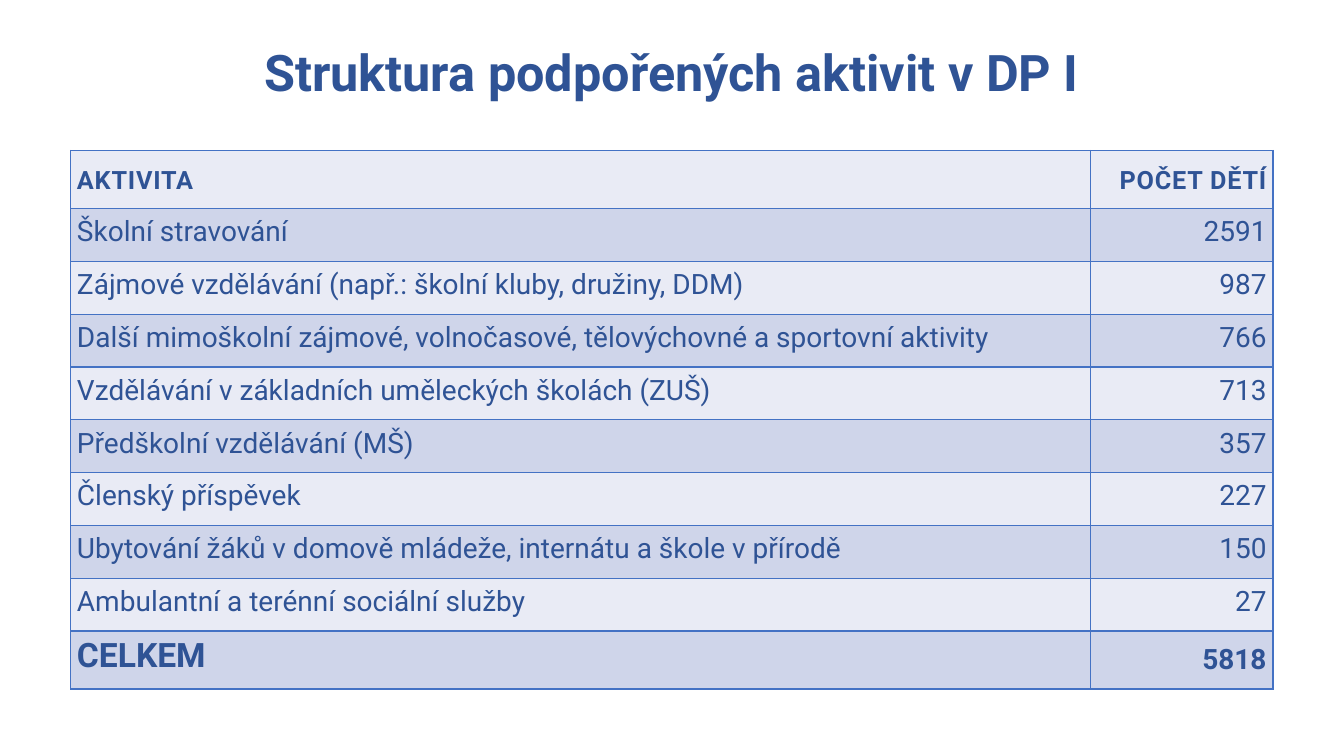
from lxml import etree
from pptx import Presentation
from pptx import util as u
from pptx.dml.color import RGBColor
from pptx.enum import text
from pptx.oxml.ns import qn

TITLE = "Struktura podpořených aktivit v DP I"
HEADER = ("AKTIVITA", "POČET DĚTÍ")
ACTIVITIES = [
    ("Školní stravování", 2591),
    ("Zájmové vzdělávání (např.: školní kluby, družiny, DDM)", 987),
    ("Další mimoškolní zájmové, volnočasové, tělovýchovné a sportovní aktivity", 766),
    ("Vzdělávání v základních uměleckých školách (ZUŠ)", 713),
    ("Předškolní vzdělávání (MŠ)", 357),
    ("Členský příspěvek", 227),
    ("Ubytování žáků v domově mládeže, internátu a škole v přírodě", 150),
    ("Ambulantní a terénní sociální služby", 27),
]
TOTAL = ("CELKEM", sum(count for _, count in ACTIVITIES))
ROWS = [HEADER, *ACTIVITIES, TOTAL]

COLORS = {"ink": "2F5395", "line": "4472C4", "light": "E9EBF5", "dark": "CFD5EA"}
FONT = "Roboto"
LEFT, WIDTH = 1.78, 30.3
TITLE_TOP, TITLE_HEIGHT = 0.91, 1.8
TABLE_TOP = 3.79
COLUMN_WIDTHS = (25.7, 4.6)
HEADER_HEIGHT, ROW_HEIGHT, TOTAL_HEIGHT = 1.47, 1.33, 1.46
SIDE_INSET, END_INSET = 0.16, 0.32
ALIGNMENTS = (text.PP_ALIGN.LEFT, text.PP_ALIGN.RIGHT)


def add_span(para, words, size, bold):
    span = para.add_run()
    span.text = str(words)
    span.font.name = FONT
    span.font.size = u.Pt(size)
    span.font.bold = bold
    span.font.color.rgb = RGBColor.from_string(COLORS["ink"])
    return span


def add_borders(cell):
    properties = cell._tc.get_or_add_tcPr()
    for position, side in enumerate(("lnL", "lnR", "lnT", "lnB")):
        line = etree.Element(qn(f"a:{side}"), w=str(u.Pt(1)))
        fill = etree.SubElement(line, qn("a:solidFill"))
        etree.SubElement(fill, qn("a:srgbClr"), val=COLORS["line"])
        properties.insert(position, line)


def add_title(page):
    box = page.shapes.title
    box.left, box.top = u.Cm(LEFT), u.Cm(TITLE_TOP)
    box.width, box.height = u.Cm(WIDTH), u.Cm(TITLE_HEIGHT)
    frame = box.text_frame
    frame.word_wrap = True
    frame.auto_size = text.MSO_AUTO_SIZE.NONE
    frame.vertical_anchor = text.MSO_ANCHOR.MIDDLE
    para = frame.paragraphs[0]
    para.alignment = text.PP_ALIGN.CENTER
    add_span(para, TITLE, 36, True)


def add_activity_table(page):
    heights = [HEADER_HEIGHT] + [ROW_HEIGHT] * len(ACTIVITIES) + [TOTAL_HEIGHT]
    table = page.shapes.add_table(
        len(ROWS), len(HEADER), u.Cm(LEFT), u.Cm(TABLE_TOP),
        u.Cm(sum(COLUMN_WIDTHS)), u.Cm(sum(heights))).table
    for column, width in zip(table.columns, COLUMN_WIDTHS):
        column.width = u.Cm(width)

    for number, (values, height) in enumerate(zip(ROWS, heights)):
        table.rows[number].height = u.Cm(height)
        is_header, is_total = values is HEADER, values is TOTAL
        for index, value in enumerate(values):
            cell = table.cell(number, index)
            cell.margin_left = cell.margin_right = u.Cm(SIDE_INSET)
            cell.margin_top = u.Cm(END_INSET if is_header else 0)
            cell.margin_bottom = u.Cm(END_INSET)
            cell.vertical_anchor = text.MSO_ANCHOR.BOTTOM
            cell.fill.solid()
            shade = "dark" if number % 2 else "light"
            cell.fill.fore_color.rgb = RGBColor.from_string(COLORS[shade])
            add_borders(cell)

            para = cell.text_frame.paragraphs[0]
            para.alignment = ALIGNMENTS[index]
            size = 18 if is_header else 24 if is_total and index == 0 else 20
            span = add_span(para, value, size, is_header or is_total)
            if is_header:
                span.font._element.set("spc", "60")


def main():
    deck = Presentation()
    deck.slide_width, deck.slide_height = u.Cm(33.87), u.Cm(19.05)
    page = deck.slides.add_slide(deck.slide_layouts[5])
    add_title(page)
    add_activity_table(page)
    deck.save("out.pptx")


if __name__ == "__main__":
    main()
